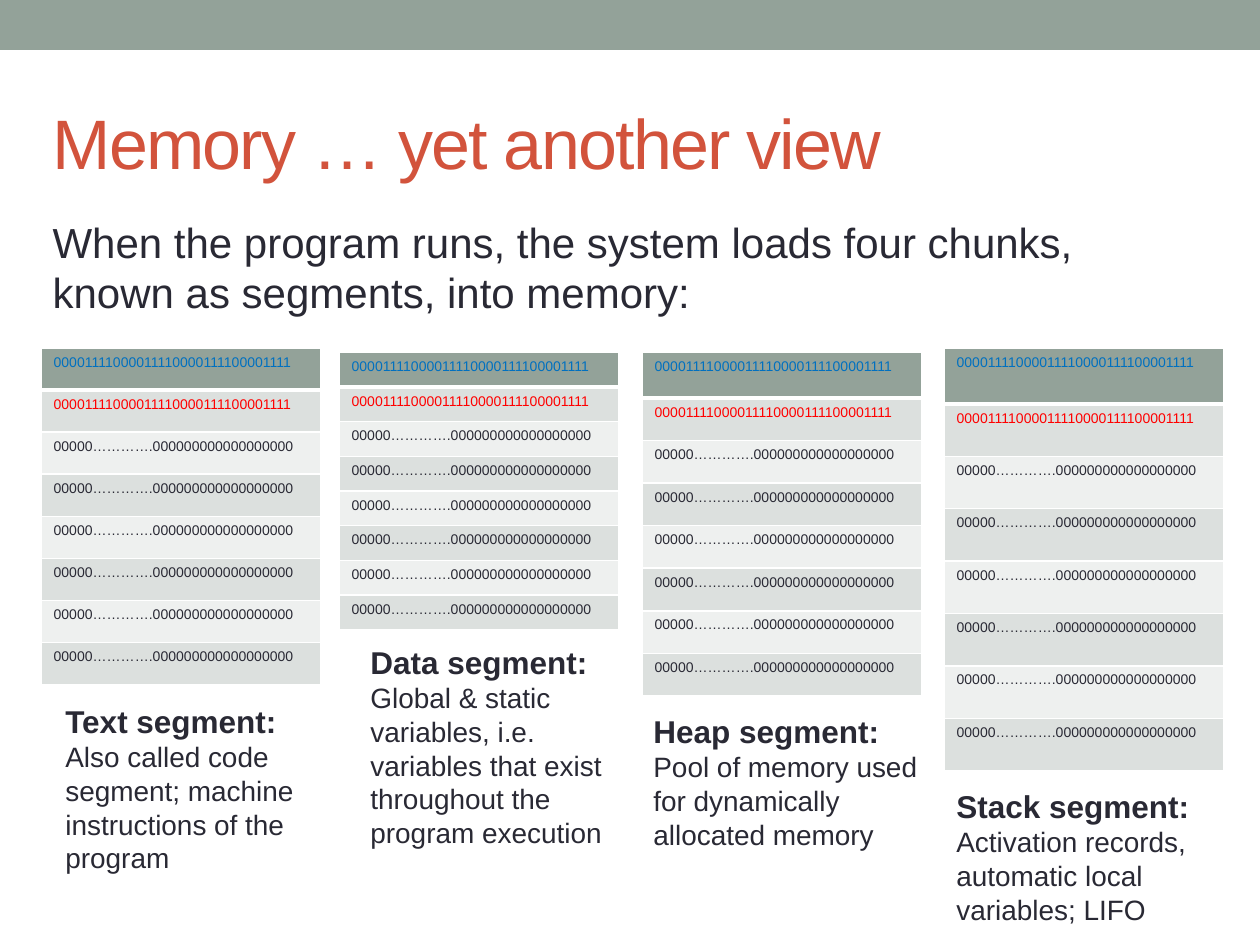
from lxml import etree
from pptx import Presentation
from pptx import util as u
from pptx.dml.color import RGBColor
from pptx.enum import shapes, text
from pptx.oxml import ns

SCALE = 914400 / 126
FONT = "Arial"
SAGE, RUST, INK, WHITE = "93A299", "D2533C", "292934", "FFFFFF"
BLUE, RED = "0070C0", "FF0000"
BANDS = ("DCE0DE", "EEF0EF")
BITS = "00001111000011110000111100001111"
ZEROS = "00000………….000000000000000000"
ROWS = [(BITS, BLUE), (BITS, RED)] + [(ZEROS, INK)] * 6
COLUMN_WIDTH = 280

SEGMENTS = [
    ("Text segment:", "Also called code segment; machine instructions of the program",
     (41, 348, 337, 42), (53, 696, 281, 186)),
    ("Data segment:", "Global & static variables, i.e. variables that exist "
     "throughout the program execution",
     (339, 352, 278, 35), (358, 637, 281, 220)),
    ("Heap segment:", "Pool of memory used for dynamically allocated memory",
     (642, 352, 344, 46), (641, 706, 295, 153)),
    ("Stack segment:", "Activation records, automatic local variables; LIFO",
     (944, 348, 423, 56), (944, 781, 295, 153)),
]


def px(length):
    return u.Emu(round(length * SCALE))


def color(value):
    return RGBColor.from_string(value)


def place(shape, left, top, width, height):
    shape.left, shape.top = px(left), px(top)
    shape.width, shape.height = px(width), px(height)


def format_paragraph(paragraph, size, value, bold=False):
    paragraph.alignment = text.PP_ALIGN.LEFT
    for run in paragraph.runs:
        run.font.name = FONT
        run.font.size = u.Pt(size)
        run.font.bold = bold
        run.font.color.rgb = color(value)


def add_band(slide):
    band = slide.shapes.add_shape(shapes.MSO_SHAPE.RECTANGLE, 0, 0, px(1260), px(50))
    band.shadow.inherit = False
    band.fill.solid()
    band.fill.fore_color.rgb = color(SAGE)
    band.line.fill.background()


def fill_placeholder(shape, box, content, size, value, anchor):
    place(shape, *box)
    frame = shape.text_frame
    frame.text = content
    frame.auto_size = text.MSO_AUTO_SIZE.NONE
    frame.vertical_anchor = anchor
    paragraph = frame.paragraphs[0]
    format_paragraph(paragraph, size, value)
    return paragraph


def remove_bullet(paragraph):
    properties = paragraph._p.get_or_add_pPr()
    properties.set("marL", "0")
    properties.set("indent", "0")
    etree.SubElement(properties, ns.qn("a:buNone"))


def set_borders(cell, bottom):
    properties = cell._tc.get_or_add_tcPr()
    for side, width in (("L", 1), ("R", 1), ("T", 1), ("B", bottom)):
        line = etree.SubElement(properties, ns.qn(f"a:ln{side}"), w=str(u.Pt(width)))
        fill = etree.SubElement(line, ns.qn("a:solidFill"))
        etree.SubElement(fill, ns.qn("a:srgbClr"), val=WHITE)


def add_memory_table(slide, left, top, height, header_height):
    frame = slide.shapes.add_table(len(ROWS), 1, px(left), px(top),
                                   px(COLUMN_WIDTH), px(height))
    table = frame.table
    row_height = (height - header_height) / (len(ROWS) - 1)
    for index, (content, value) in enumerate(ROWS):
        header = index == 0
        table.rows[index].height = px(header_height if header else row_height)
        cell = table.cell(index, 0)
        cell.text_frame.text = content
        format_paragraph(cell.text_frame.paragraphs[0], 8, value)
        set_borders(cell, 3 if header or index == 0 else 1)
        cell.fill.solid()
        cell.fill.fore_color.rgb = color(SAGE if header else BANDS[(index - 1) % 2])


def add_caption(slide, box, heading, description):
    shape = slide.shapes.add_textbox(*map(px, box))
    frame = shape.text_frame
    frame.word_wrap = True
    frame.auto_size = text.MSO_AUTO_SIZE.SHAPE_TO_FIT_TEXT
    frame.text = heading
    format_paragraph(frame.paragraphs[0], 18, INK, bold=True)
    paragraph = frame.add_paragraph()
    paragraph.text = description
    format_paragraph(paragraph, 16, INK)


def main():
    presentation = Presentation()
    presentation.slide_width, presentation.slide_height = px(1260), px(945)
    slide = presentation.slides.add_slide(presentation.slide_layouts[1])
    add_band(slide)
    title = fill_placeholder(slide.shapes.title, (40, 73, 1157, 136),
                             "Memory … yet another view", 40, RUST,
                             text.MSO_ANCHOR.MIDDLE)
    title.runs[0]._r.get_or_add_rPr().set("spc", "-100")
    body = fill_placeholder(slide.placeholders[1], (40, 210, 1157, 683),
                            "When the program runs, the system loads four chunks, "
                            "known as segments, into memory:", 24, INK,
                            text.MSO_ANCHOR.TOP)
    remove_bullet(body)
    for heading, description, table_box, caption_box in SEGMENTS:
        add_memory_table(slide, *table_box)
        add_caption(slide, caption_box, heading, description)
    presentation.save("out.pptx")


if __name__ == "__main__":
    main()
